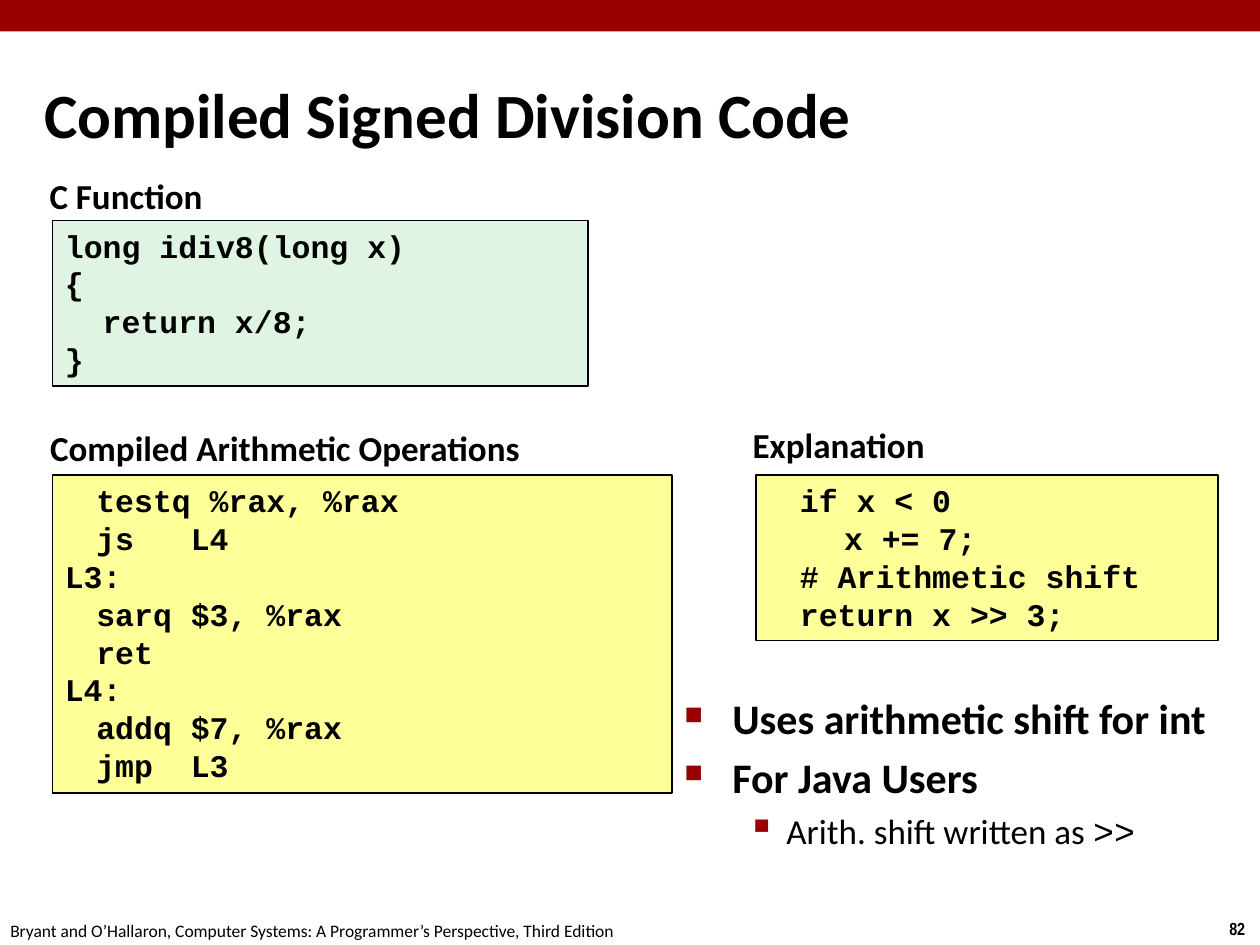
from lxml.etree import SubElement
from pptx import Presentation
from pptx.dml.color import RGBColor
from pptx.enum.shapes import MSO_SHAPE as Preset
from pptx.enum.text import MSO_ANCHOR as Anchor, PP_ALIGN as Align
from pptx.oxml.ns import qn
from pptx.util import Emu, Inches, Pt

COLORS = {"bar": "990000", "ink": "000000", "paper": "FFFFFF",
          "source": "E0F4E3", "result": "FFFF99"}
SANS, MONO, NARROW = "Calibri", "Courier New", "Arial Narrow"
BULLETS = [("■", 60, 0.38, -0.38), ("▪", 110, 0.81, -0.31)]


class CodeSlide:
    """Holds the style and slide; lengths are cells of a 120 by 90 grid."""

    def __init__(self, presentation):
        self.cell = presentation.slide_width / 120
        self.slide = presentation.slides.add_slide(presentation.slide_layouts[5])
        self.slide.background.fill.solid()
        self.slide.background.fill.fore_color.rgb = self.color("paper")

    def color(self, name):
        return RGBColor.from_string(COLORS[name])

    def grid(self, *cells):
        return [Emu(round(value * self.cell)) for value in cells]

    def font(self, paragraph, size, name=SANS, bold=True):
        font = paragraph.font
        font.size, font.name, font.bold = Pt(size), name, bold
        font.color.rgb = self.color("ink")

    def indent(self, paragraph, left, first):
        properties = paragraph._p.get_or_add_pPr()
        properties.set("marL", str(Inches(left)))
        properties.set("indent", str(Inches(first)))
        return properties

    def title(self, text, *cells):
        shape = self.slide.shapes.title
        shape.left, shape.top, shape.width, shape.height = self.grid(*cells)
        shape.text_frame.text = text
        shape.text_frame.vertical_anchor = Anchor.MIDDLE
        paragraph = shape.text_frame.paragraphs[0]
        paragraph.alignment = Align.LEFT
        self.indent(paragraph, 0.13, -0.13)
        self.font(paragraph, 36)

    def box(self, fill, *cells):
        shape = self.slide.shapes.add_shape(Preset.RECTANGLE, *self.grid(*cells))
        shape.shadow.inherit = False
        shape.fill.solid()
        shape.fill.fore_color.rgb = self.color(fill)
        shape.line.fill.background()
        return shape

    def text(self, text, *cells, size=10, name=SANS, bold=True, align=Align.LEFT, inset=0.1):
        frame = self.slide.shapes.add_textbox(*self.grid(*cells)).text_frame
        frame.word_wrap = False
        frame.margin_left = frame.margin_right = Inches(inset)
        frame.text = text
        frame.paragraphs[0].alignment = align
        self.font(frame.paragraphs[0], size, name, bold)

    def heading(self, text, *cells):
        self.text(text, *cells, size=20, align=Align.CENTER, inset=0.05)

    def code(self, lines, fill, stops, *cells):
        shape = self.box(fill, *cells)
        shape.line.color.rgb = self.color("ink")
        shape.line.width = Pt(1)
        frame = shape.text_frame
        frame.vertical_anchor = Anchor.TOP
        frame.text = "\n".join(lines)
        for paragraph in frame.paragraphs:
            paragraph.alignment = Align.LEFT
            tabs = SubElement(paragraph._p.get_or_add_pPr(), qn("a:tabLst"))
            for stop in stops:
                SubElement(tabs, qn("a:tab"), pos=str(Inches(stop)), algn="l")
            self.font(paragraph, 18, MONO)

    def bullets(self, items, *cells):
        frame = self.slide.shapes.add_textbox(*self.grid(*cells)).text_frame
        frame.word_wrap = True
        for number, (level, text, code) in enumerate(items):
            paragraph = frame.add_paragraph() if number else frame.paragraphs[0]
            size = 24 - 4 * level
            paragraph.level = level
            paragraph.space_before = Pt(size * 0.2)
            mark, percent, left, first = BULLETS[level]
            properties = self.indent(paragraph, left, first)
            color = SubElement(properties, qn("a:buClr"))
            SubElement(color, qn("a:srgbClr"), val=COLORS["bar"])
            SubElement(properties, qn("a:buSzPct"), val=str(percent * 1000))
            SubElement(properties, qn("a:buChar"), char=mark)
            self.font(paragraph, size, bold=level == 0)
            paragraph.add_run().text = text
            if code:
                run = paragraph.add_run()
                run.text, run.font.name = code, MONO


def main():
    presentation = Presentation()
    presentation.slide_width, presentation.slide_height = Inches(10), Inches(7.5)
    page = CodeSlide(presentation)
    page.box("bar", 0, 0, 120, 3)
    page.text("82", 115.9, 86.8, 4.1, 3.2, name=NARROW)
    page.text("Bryant and O’Hallaron, Computer Systems: A Programmer’s Perspective, Third Edition",
              -0.2, 87, 61, 3.2, bold=False)
    page.title("Compiled Signed Division Code", 3, 7, 104, 7.5)

    page.heading("C Function", 4, 16, 16, 5.25)
    page.code(["long idiv8(long x)", "{", "\treturn x/8;", "}"],
              "source", [0.3], 5, 21, 51, 15.75)

    page.heading("Compiled Arithmetic Operations", 4, 40, 46.3, 5.25)
    page.code(["\ttestq %rax, %rax", "\tjs\tL4", "L3:", "\tsarq\t$3, %rax", "\tret",
               "L4:", "\taddq\t$7, %rax", "\tjmp\tL3"],
              "result", [0.25, 1], 5, 45.25, 59, 30.25)

    page.heading("Explanation", 71, 39.75, 17.75, 5.25)
    page.code(["\tif x < 0", "\t\tx += 7;", "\t# Arithmetic shift", "\treturn x >> 3;"],
              "result", [0.25, 0.6], 72, 45.25, 44, 15.75)

    page.bullets([(0, "Uses arithmetic shift for int", ""), (0, "For Java Users", ""),
                  (1, "Arith. shift written as ", ">>")], 64, 65.4, 56, 15.6)
    presentation.save("out.pptx")


if __name__ == "__main__":
    main()
